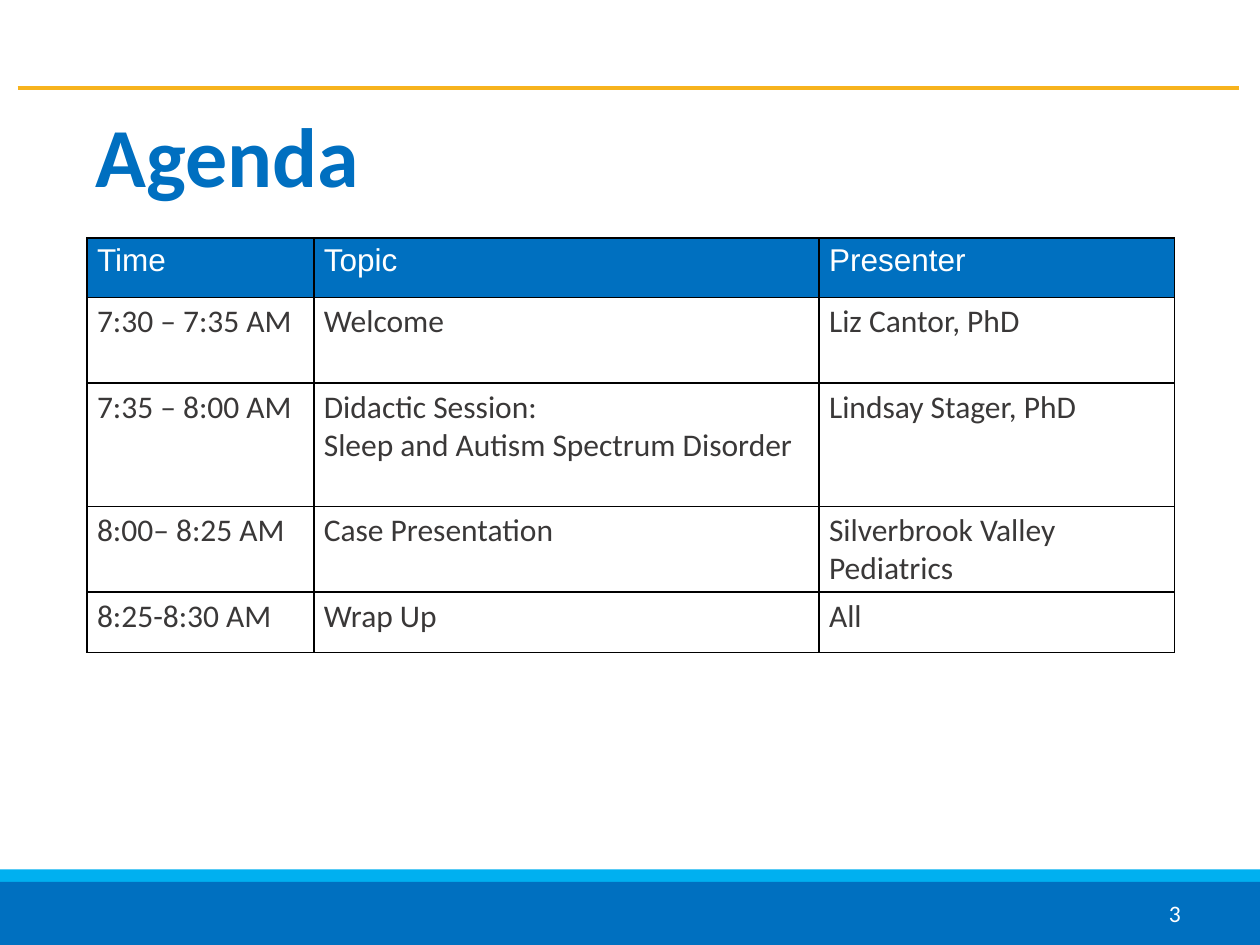
import pptx
import pptx.util
import pptx.dml.color
import pptx.enum.shapes
import pptx.enum.text
import pptx.oxml
import pptx.oxml.ns
import lxml.etree

WIDE, HIGH = 10, 7.5
BLUE, SKY, GOLD, DARK, WHITE = "0070C0", "00B0F0", "F7B31D", "3A3838", "FFFFFF"

ROWS = [
    ("Time", "Topic", "Presenter"),
    ("7:30 – 7:35 AM", "Welcome", "Liz Cantor, PhD"),
    ("7:35 – 8:00 AM", "Didactic Session:\nSleep and Autism Spectrum Disorder",
     "Lindsay Stager, PhD"),
    ("8:00– 8:25 AM", "Case Presentation", "Silverbrook Valley Pediatrics"),
    ("8:25-8:30 AM", "Wrap Up", "All"),
]
COLS = [1.8, 4.01, 2.82]
TALL = [0.47, 0.68, 0.98, 0.68, 0.48]
BANDS = [(0.6, SKY), (0.5, BLUE)]
HEAD = {"size": 18, "name": "Arial", "color": WHITE}
BODY = {"size": 18, "name": "Calibri", "color": DARK}
TITLE = {"size": 48, "name": "Calibri", "color": "006FC0", "bold": True}
PAGE = {"size": 13.5, "name": "Calibri", "color": WHITE}

inch = pptx.util.Inches


def tint(code):
    return pptx.dml.color.RGBColor.from_string(code)


def write(frame, text, look, **form):
    frame.text = text
    for para in frame.paragraphs:
        for key, val in form.items():
            setattr(para, key, val)
        for run in para.runs:
            for key, val in look.items():
                if key == "color":
                    run.font.color.rgb = tint(val)
                else:
                    setattr(run.font, key, pptx.util.Pt(val) if key == "size" else val)


def inset(part, side):
    for key, val in {"left": side, "right": side, "top": 0.04, "bottom": 0.04}.items():
        setattr(part, "margin_" + key, inch(val))


def label(slide, spot, text, look, **form):
    frame = slide.shapes.add_textbox(*map(inch, spot)).text_frame
    frame.word_wrap = True
    frame.vertical_anchor = pptx.enum.text.MSO_ANCHOR.MIDDLE
    inset(frame, 0.07)
    write(frame, text, look, **form)


def edge(cell):
    props = cell._tc.get_or_add_tcPr()
    space = pptx.oxml.ns.nsdecls("a")
    for spot, side in enumerate("LRTB"):
        props.insert(spot, pptx.oxml.parse_xml(
            f'<a:ln{side} {space} w="12700"><a:solidFill>'
            f'<a:srgbClr val="000000"/></a:solidFill></a:ln{side}>'))


def bands(slide):
    for tall, code in BANDS:
        bar = slide.shapes.add_shape(
            pptx.enum.shapes.MSO_SHAPE.RECTANGLE,
            0, inch(HIGH - tall), inch(WIDE), inch(tall))
        bar.shadow.inherit = False
        bar.fill.solid()
        bar.fill.fore_color.rgb = tint(code)
        bar.line.fill.background()


def rule(slide):
    line = slide.shapes.add_connector(
        pptx.enum.shapes.MSO_CONNECTOR.STRAIGHT,
        *map(inch, (0.14, 0.7, 9.83, 0.7)))
    line.line.color.rgb = tint(GOLD)
    line.line.width = pptx.util.Pt(2)
    lxml.etree.SubElement(line._element.spPr, pptx.oxml.ns.qn("a:effectLst"))


def agenda(slide):
    spot = (0.69, 1.89, sum(COLS), sum(TALL))
    table = slide.shapes.add_table(len(ROWS), len(COLS), *map(inch, spot)).table
    table.horz_banding = False
    for col, wide in zip(table.columns, COLS):
        col.width = inch(wide)
    for r, (row, tall) in enumerate(zip(ROWS, TALL)):
        table.rows[r].height = inch(tall)
        for c, text in enumerate(row):
            cell = table.cell(r, c)
            inset(cell, 0.08)
            cell.fill.solid()
            cell.fill.fore_color.rgb = tint(WHITE if r else BLUE)
            write(cell.text_frame, text, BODY if r else HEAD)
            edge(cell)


def main():
    deck = pptx.Presentation()
    deck.slide_width, deck.slide_height = inch(WIDE), inch(HIGH)
    slide = deck.slides.add_slide(deck.slide_layouts[6])
    bands(slide)
    rule(slide)
    label(slide, (7.19, 7.05, 2.25, 0.4), "3", PAGE,
          alignment=pptx.enum.text.PP_ALIGN.RIGHT)
    label(slide, (0.69, 0.84, 8.63, 0.86), "Agenda", TITLE, line_spacing=0.9)
    agenda(slide)
    deck.save("out.pptx")


if __name__ == "__main__":
    main()
